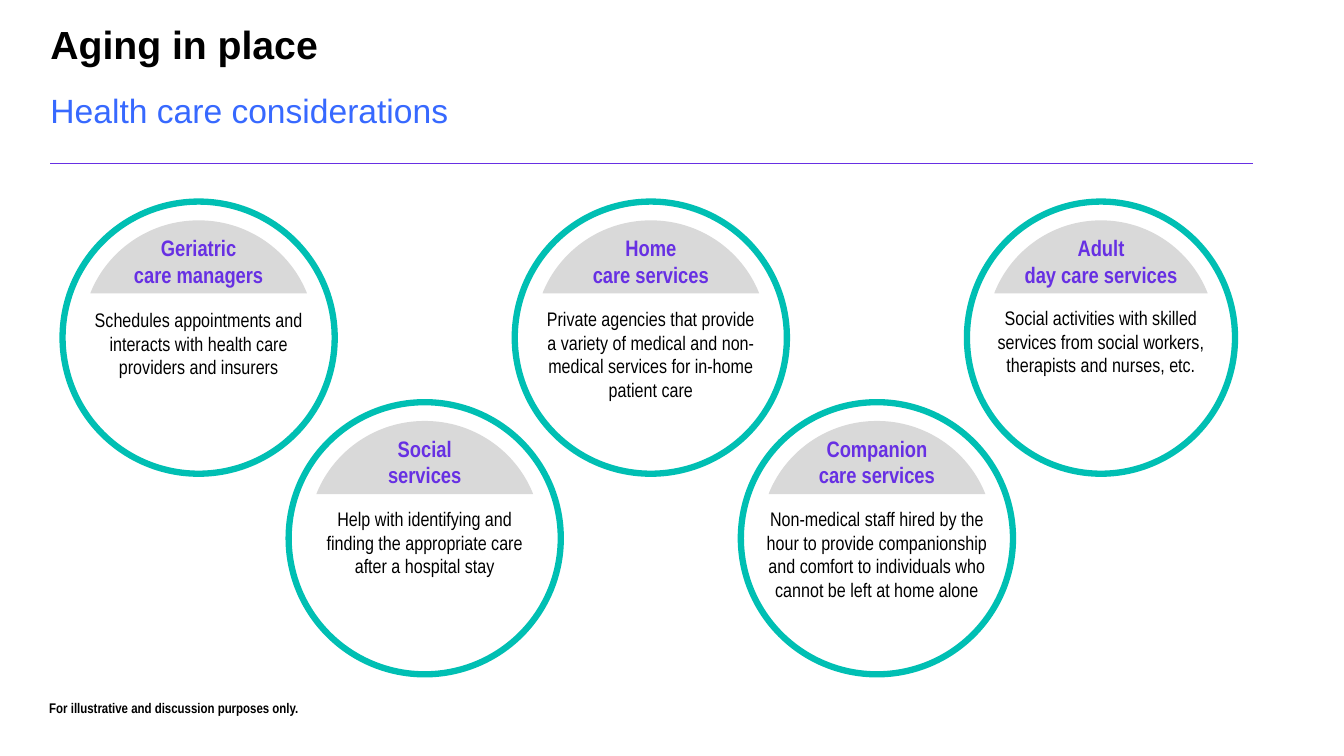
from collections import namedtuple

from lxml.etree import SubElement
from pptx import Presentation
from pptx.dml.color import RGBColor
from pptx.enum.shapes import MSO_CONNECTOR, MSO_SHAPE
from pptx.enum.text import MSO_ANCHOR, MSO_AUTO_SIZE, PP_ALIGN
from pptx.oxml.ns import qn
from pptx.util import Pt

COLORS = {
    "title": "000000",
    "subtitle": "3769FF",
    "heading": "6730E3",
    "rule": "6730E3",
    "body": "000000",
    "cap": "D9D9D9",
    "ring": "00BFB3",
}
FORMATS = {
    "title": {"name": "Arial", "size": Pt(28), "bold": True},
    "subtitle": {"name": "Arial", "size": Pt(24), "bold": False},
    "heading": {"name": "Arial Narrow", "size": Pt(16), "bold": True},
    "body": {"name": "Arial Narrow", "size": Pt(14), "bold": False},
    "footnote": {"name": "Arial Narrow", "size": Pt(10), "bold": True},
}
Service = namedtuple("Service", "heading heading_width body body_box width")
SERVICES = [
    Service(["Geriatric", "care managers"], 108,
            "Schedules appointments and interacts with health care providers and insurers",
            (72.6, 190, 58.3), 194.4),
    Service(["Social", "services"], 67,
            "Help with identifying and finding the appropriate care after a hospital stay",
            (71.3, 172.8, 58.3), 194.4),
    Service(["Home", "care services"], 98,
            "Private agencies that provide a variety of medical and non-medical services "
            "for in-home patient care",
            (71.8, 165.6, 74.9), 194.4),
    Service(["Companion", "care services"], 98,
            "Non-medical staff hired by the hour to provide companionship and comfort "
            "to individuals who cannot be left at home alone",
            (71.3, 175.7, 74.9), 194.4),
    Service(["Adult", "day care services"], 124.6,
            "Social activities with skilled services from social workers, therapists "
            "and nurses, etc.",
            (71, 191.5, 81.4), 191.5),
]
CIRCLE_HEIGHT = 194.4
CIRCLE_STEP = 161.5
ROW_TOPS = (144, 287.3)


def color(name):
    """Return the named colour."""
    return RGBColor.from_string(COLORS[name])


def format_paragraph(paragraph, text, style, color_name, alignment):
    """Write one paragraph in the given style."""
    paragraph.text = text
    paragraph.alignment = alignment
    for attribute, value in FORMATS[style].items():
        setattr(paragraph.font, attribute, value)
    paragraph.font.color.rgb = color(color_name)


def add_text(shapes, box, lines, style, color_name, alignment, wrap):
    """Add a text box holding one paragraph per line."""
    frame = shapes.add_textbox(*map(Pt, box)).text_frame
    frame.word_wrap = wrap
    frame.auto_size = MSO_AUTO_SIZE.SHAPE_TO_FIT_TEXT
    for index, line in enumerate(lines):
        paragraph = frame.add_paragraph() if index else frame.paragraphs[0]
        format_paragraph(paragraph, line, style, color_name, alignment)
    return frame


def add_header(slide, left, top, width):
    """Place the title, its subtitle and the rule below them."""
    title = slide.shapes.title
    box = {"left": left, "top": top, "width": 684, "height": 72}
    for attribute, value in box.items():
        setattr(title, attribute, Pt(value))
    frame = title.text_frame
    settings = {
        "margin_left": 0, "margin_right": 0, "margin_top": 0, "margin_bottom": 0,
        "vertical_anchor": MSO_ANCHOR.TOP, "auto_size": MSO_AUTO_SIZE.NONE,
        "word_wrap": True,
    }
    for attribute, value in settings.items():
        setattr(frame, attribute, value)
    format_paragraph(frame.paragraphs[0], "Aging in place", "title", "title", PP_ALIGN.LEFT)
    subtitle = frame.add_paragraph()
    format_paragraph(subtitle, "Health care considerations", "subtitle", "subtitle", PP_ALIGN.LEFT)
    frame.paragraphs[0].space_before = Pt(0)
    subtitle.space_before = Pt(16.3)

    rule_top = Pt(top + 102.2)
    rule = slide.shapes.add_connector(
        MSO_CONNECTOR.STRAIGHT, Pt(left), rule_top, Pt(left + width), rule_top)
    rule.line.color.rgb = color("rule")
    rule.line.width = Pt(0.75)
    SubElement(rule._element.spPr, qn("a:effectLst"))


def curve_segments(shape, starts):
    """Turn each run of three straight segments at the given indexes into a curve."""
    segments = list(shape._element.iter(qn("a:lnTo")))
    for start in starts:
        first, *others = segments[start:start + 3]
        curve = first.makeelement(qn("a:cubicBezTo"))
        first.addprevious(curve)
        for segment in (first, *others):
            curve.append(segment[0])
            segment.getparent().remove(segment)


def add_cap(shapes, left, top, width, height):
    """Draw the filled circular segment behind a heading."""
    outline = [
        (0.5, 0), (0.725, 0), (0.917, 0.405), (0.997, 0.975), (1, 1),
        (0, 1), (0.003, 0.975), (0.083, 0.405), (0.275, 0), (0.5, 0),
    ]
    points = [(Pt(left + x * width), Pt(top + y * height)) for x, y in outline]
    builder = shapes.build_freeform(*points[0])
    builder.add_line_segments(points[1:], close=True)
    cap = builder.convert_to_shape()
    curve_segments(cap, (0, 6))
    cap.shadow.inherit = False
    cap.fill.solid()
    cap.fill.fore_color.rgb = color("cap")
    cap.line.fill.background()


def add_service(slide, left, top, service):
    """Place one ringed service with its heading and description."""
    shapes = slide.shapes.add_group_shape().shapes
    center = left + service.width / 2
    cap_width = service.width * 0.796
    add_cap(shapes, center - cap_width / 2, top + 13.4, cap_width, 52.2)
    ring = shapes.add_shape(
        MSO_SHAPE.OVAL, Pt(left), Pt(top), Pt(service.width), Pt(CIRCLE_HEIGHT))
    ring.shadow.inherit = False
    ring.fill.background()
    ring.line.color.rgb = color("ring")
    ring.line.width = Pt(4.5)
    heading_box = (center - service.heading_width / 2, top + 19.7, service.heading_width, 46)
    add_text(shapes, heading_box, service.heading,
             "heading", "heading", PP_ALIGN.CENTER, False)
    offset, body_width, body_height = service.body_box
    body_box = (center - body_width / 2, top + offset, body_width, body_height)
    body = add_text(shapes, body_box, [service.body],
                    "body", "body", PP_ALIGN.CENTER, True)
    body.paragraphs[0].space_after = Pt(6)


def add_footnote(slide, left, top):
    """Place the disclaimer at the bottom."""
    frame = add_text(slide.shapes, (left, top, 194.4, 19.4),
                     ["For illustrative and discussion purposes only."],
                     "footnote", "body", PP_ALIGN.LEFT, False)
    frame.margin_left = 0


def main():
    """Build and save the slide."""
    presentation = Presentation()
    presentation.slide_width = Pt(960)
    presentation.slide_height = Pt(540)
    slide = presentation.slides.add_slide(presentation.slide_layouts[5])
    add_header(slide, 36, 14.4, 859)
    for index, service in enumerate(SERVICES):
        add_service(slide, 44.7 + index * CIRCLE_STEP, ROW_TOPS[index % 2], service)
    add_footnote(slide, 35.2, 496)
    presentation.save("out.pptx")


if __name__ == "__main__":
    main()
